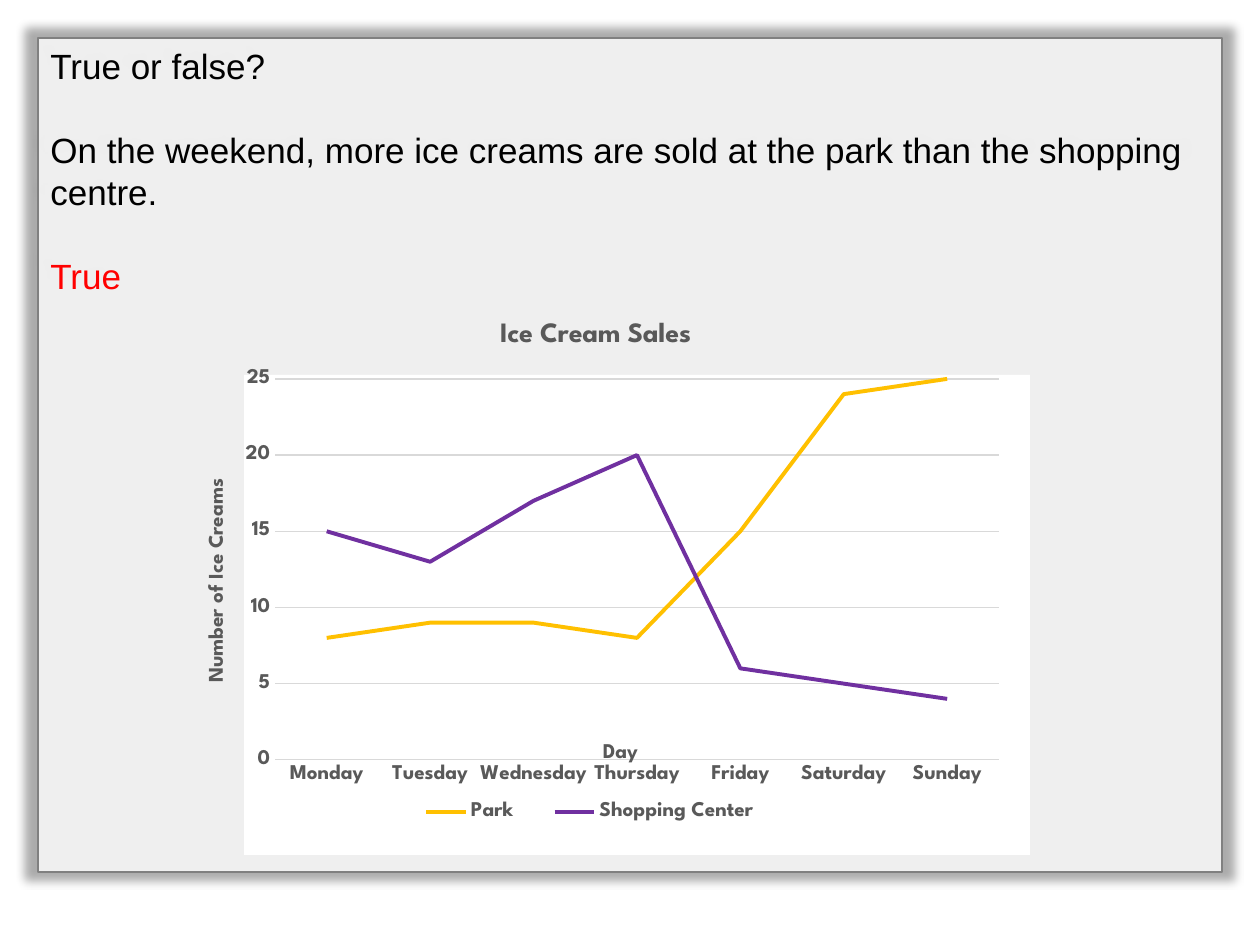
from dataclasses import dataclass

from lxml import etree
from pptx import Presentation
from pptx.chart.data import CategoryChartData
from pptx.dml.color import RGBColor
from pptx.enum.chart import XL_CHART_TYPE, XL_LEGEND_POSITION, XL_TICK_MARK
from pptx.enum.shapes import MSO_SHAPE
from pptx.enum.text import MSO_ANCHOR, PP_ALIGN
from pptx.oxml.ns import qn
from pptx.util import Emu, Pt

PX_PER_INCH = 126


@dataclass(frozen=True)
class Theme:
    white: RGBColor = RGBColor(0xFF, 0xFF, 0xFF)
    ink: RGBColor = RGBColor(0, 0, 0)
    answer: RGBColor = RGBColor(0xFF, 0, 0)
    border: RGBColor = RGBColor(0x80, 0x80, 0x80)
    label: RGBColor = RGBColor(0x59, 0x59, 0x59)
    grid: RGBColor = RGBColor(0xD9, 0xD9, 0xD9)
    park: RGBColor = RGBColor(0xFF, 0xC0, 0)
    shopping: RGBColor = RGBColor(0x70, 0x30, 0xA0)
    body_font: str = "Arial"
    chart_font: str = "League Spartan"
    body_size: int = 20
    line_pitch: int = 24
    title_size: int = 16
    label_size: int = 12


THEME = Theme()
DAYS = ["Monday", "Tuesday", "Wednesday", "Thursday", "Friday", "Saturday", "Sunday"]
SALES = [
    ("Park", [8, 9, 9, 8, 15, 24, 25], THEME.park),
    ("Shopping Center", [15, 13, 17, 20, 6, 5, 4], THEME.shopping),
]
QUESTION = [
    ("True or false?", THEME.ink),
    ("On the weekend, more ice creams are sold at the park than the shopping centre.",
     THEME.ink),
    ("True", THEME.answer),
]


def px(length):
    return Emu(round(length * 914400 / PX_PER_INCH))


def style_font(font, name, size, color, bold=False):
    font.name, font.size, font.bold = name, Pt(size), bold
    font.color.rgb = color


def style_label(font, size=THEME.label_size):
    style_font(font, THEME.chart_font, size, THEME.label, True)


def add_panel(slide, box):
    panel = slide.shapes.add_shape(MSO_SHAPE.RECTANGLE, *map(px, box))
    panel.shadow.inherit = False
    panel.fill.solid()
    panel.fill.fore_color.rgb = THEME.white
    panel.line.fill.background()
    return panel


def add_halo(panel):
    """Make the panel slightly see-through over a soft, centred shadow."""
    properties = panel.element.spPr
    fill_color = properties.find(qn("a:solidFill"))[0]
    etree.SubElement(fill_color, qn("a:alpha"), val="82000")
    shadow = etree.SubElement(
        properties.find(qn("a:effectLst")), qn("a:outerShdw"), blurRad="63500",
        sx="102000", sy="102000", algn="ctr", rotWithShape="0")
    color = etree.SubElement(shadow, qn("a:srgbClr"), val=str(THEME.ink))
    etree.SubElement(color, qn("a:alpha"), val="40000")


def add_question(slide, box):
    card = add_panel(slide, box)
    card.line.color.rgb = THEME.border
    card.line.width = Pt(1)
    add_halo(card)
    frame = card.text_frame
    frame.word_wrap = True
    frame.vertical_anchor = MSO_ANCHOR.TOP
    frame.text = "\n".join(text for text, _ in QUESTION)
    for index, (paragraph, (_, color)) in enumerate(zip(frame.paragraphs, QUESTION)):
        paragraph.alignment = PP_ALIGN.LEFT
        paragraph.line_spacing = Pt(THEME.line_pitch)
        paragraph.space_before = Pt(THEME.line_pitch if index else 0)
        style_font(paragraph.runs[0].font, THEME.body_font, THEME.body_size, color)


def set_title(titled, text, size=THEME.label_size):
    title = titled.chart_title if hasattr(titled, "chart_title") else titled.axis_title
    title.text_frame.text = text
    style_label(title.text_frame.paragraphs[0].runs[0].font, size)
    return title


def place(part, chart_box, left, top, width=None, height=None, inner=False):
    """Fix a chart part at px offsets from the chart's corner."""
    element = part._element
    layout = element.find(qn("c:layout"))
    if layout is None:
        layout = etree.Element(qn("c:layout"))
        before = [child for child in element
                  if child.tag in (qn("c:tx"), qn("c:legendPos"))]
        if before:
            before[-1].addnext(layout)
        else:
            element.insert(0, layout)
    for child in list(layout):
        layout.remove(child)
    manual = etree.SubElement(layout, qn("c:manualLayout"))
    if inner:
        etree.SubElement(manual, qn("c:layoutTarget"), val="inner")
    for mode in ("xMode", "yMode"):
        etree.SubElement(manual, qn(f"c:{mode}"), val="edge")
    _, _, chart_width, chart_height = chart_box
    for key, length, whole in (("x", left, chart_width), ("y", top, chart_height),
                               ("w", width, chart_width), ("h", height, chart_height)):
        if length is not None:
            etree.SubElement(manual, qn(f"c:{key}"), val=f"{length / whole:.4f}")


def style_axis(axis, title):
    axis.major_tick_mark = axis.minor_tick_mark = XL_TICK_MARK.NONE
    style_label(axis.tick_labels.font)
    return set_title(axis, title)


def add_sales_chart(slide, box):
    data = CategoryChartData()
    data.categories = DAYS
    for name, values, _ in SALES:
        data.add_series(name, values)
    chart = slide.shapes.add_chart(XL_CHART_TYPE.LINE, *map(px, box), data).chart
    style_font(chart.font, THEME.chart_font, THEME.label_size, THEME.ink, True)
    set_title(chart, "Ice Cream Sales", THEME.title_size).include_in_layout = False

    days, counts = chart.category_axis, chart.value_axis
    place(style_axis(days, "Day"), box, 425, 442)
    place(style_axis(counts, "Number of Ice Creams"), box, 28, 179)
    counts.minimum_scale, counts.maximum_scale, counts.major_unit = 0, 25, 5
    counts.format.line.fill.background()
    for line in (days.format.line, counts.major_gridlines.format.line):
        line.color.rgb = THEME.grid
        line.width = Pt(0.75)

    plot = chart.plots[0]
    plot.vary_by_categories = False
    for series, (_, _, color) in zip(plot.series, SALES):
        series.smooth = False
        series.format.line.color.rgb = color
        series.format.line.width = Pt(2.25)

    chart.has_legend = True
    chart.legend.position = XL_LEGEND_POSITION.BOTTOM
    chart.legend.include_in_layout = False
    style_label(chart.legend.font)
    place(chart.legend, box, 218, 500, 396, 32)
    plot_layout = chart._chartSpace.chart.plotArea
    place(PlotArea(plot_layout), box, 101, 83, 724, 381, inner=True)


@dataclass
class PlotArea:
    _element: object


def main():
    deck = Presentation()
    deck.slide_width, deck.slide_height = px(1260), px(945)
    slide = deck.slides.add_slide(deck.slide_layouts[6])
    add_question(slide, (38, 38, 1184, 834))
    add_panel(slide, (244, 375, 786, 480))
    add_sales_chart(slide, (174, 296, 843, 593))
    deck.save("out.pptx")


if __name__ == "__main__":
    main()
